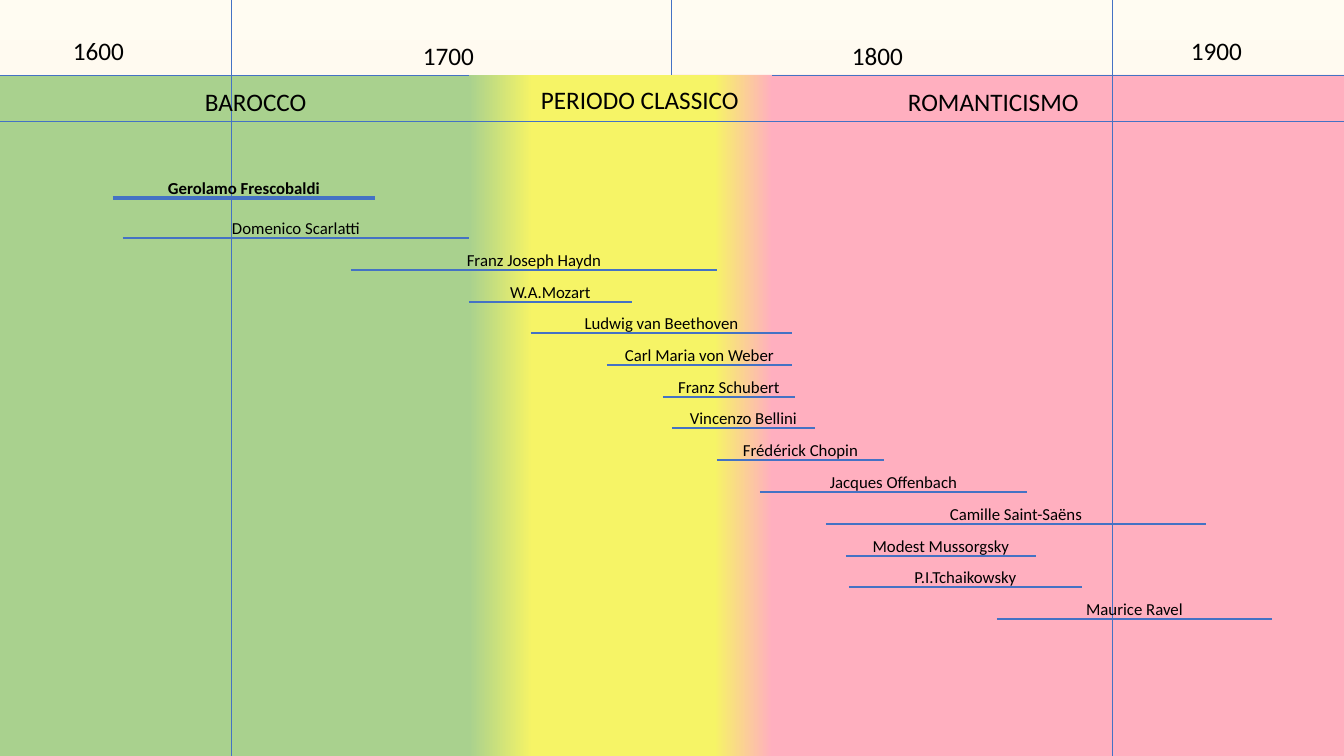
from pptx import Presentation
from pptx.dml.color import RGBColor as RGB
from pptx.enum.shapes import MSO_CONNECTOR as CONN, MSO_SHAPE as SHAPE
from pptx.enum.text import MSO_ANCHOR as ANCHOR, MSO_AUTO_SIZE as FIT, PP_ALIGN as ALIGN
from pptx.oxml.ns import qn
from pptx.util import Pt
from lxml.etree import SubElement

PX = 914400 / 100.8
W, H = 1344, 756
HEADER_Y, ERA_Y = 75, 121
THEME = {
    "font": "Calibri", "text": "000000", "line": "4472C4",
    "baroque": "A9D18E", "classic": "F6F466", "romantic": "FFAFBF",
    "sky": "FFFCF2", "sand": "FBE5D6", "peach": "F8CBAD",
    "heading": 18, "name": 12, "grid": 0.5, "life": 1.5, "highlight": 3,
}


def add_line(s, x1, y1, x2, y2, weight):
    ln = s.shapes.add_connector(CONN.STRAIGHT, *(int(v * PX) for v in (x1, y1, x2, y2)))
    ln.line.color.rgb = RGB.from_string(THEME["line"])
    ln.line.width = Pt(weight)
    SubElement(ln.element.spPr, qn("a:effectLst"))


def add_text(s, text, x, y, w, h, size, wrap=True, bold=False):
    sp = s.shapes.add_textbox(*(int(v * PX) for v in (x, y, w, h)))
    tf = sp.text_frame
    tf.word_wrap = wrap
    tf.auto_size = FIT.SHAPE_TO_FIT_TEXT
    p = tf.paragraphs[0]
    r = p.add_run()
    r.text = text
    r.font.name = THEME["font"]
    r.font.size = Pt(size)
    r.font.bold = bold
    r.font.color.rgb = RGB.from_string(THEME["text"])
    return tf


prs = Presentation()
prs.slide_width, prs.slide_height = int(W * PX), int(H * PX)
s = prs.slides.add_slide(prs.slide_layouts[6])

bands = []
for x, y, w, color in [(0, 76, 633, "baroque"), (671, 75, 673, "romantic"), (469, 75, 303, "classic")]:
    if color == "classic":
        for grid_x in (671, 231):
            add_line(s, grid_x, 0, grid_x, H, THEME["grid"])
        for year, year_x, year_y in [("1600", 63, 30), ("1800", 842, 35), ("1700", 413, 35), ("1900", 1181, 30)]:
            add_text(s, year, year_x, year_y, 72, 40, THEME["heading"], wrap=False)
        add_line(s, 0, HEADER_Y, W, HEADER_Y, THEME["grid"])
        add_text(s, "ROMANTICISMO", 898, 81, 336, 40, THEME["heading"])
        add_text(s, "BAROCCO", 195, 81, 123, 40, THEME["heading"], wrap=False)
        add_line(s, 1112, 0, 1112, H, THEME["grid"])
    band = s.shapes.add_shape(SHAPE.RECTANGLE, *(int(v * PX) for v in (x, y, w, H - y)))
    band.shadow.inherit = False
    band.line.fill.background()
    band.fill.solid()
    band.fill.fore_color.rgb = RGB.from_string(THEME[color])
    bands.append(band)

classic = bands[-1]
gradients = [
    (s.background.fill, s.element, 270, [(0, "sky"), (74, "sand"), (83, "sand"), (100, "peach")]),
    (classic.fill, classic.element, 0, [(0, "baroque"), (21, "classic"), (81, "classic"), (100, "romantic")]),
]
for fill, owner, angle, stops in gradients:
    fill.gradient()
    fill.gradient_angle = angle
    gs_list = next(owner.iter(qn("a:gsLst")))
    for gs in list(gs_list):
        gs_list.remove(gs)
    for pos, color in stops:
        gs = SubElement(gs_list, qn("a:gs"), pos=str(pos * 1000))
        SubElement(gs, qn("a:srgbClr"), val=THEME[color])

add_text(s, "PERIODO CLASSICO", 531, 79, 229, 40, THEME["heading"])
add_line(s, 0, ERA_Y, W, ERA_Y, THEME["grid"])

FIRST_Y, LIST_Y, LIST_END, NAME_H = 198, 238, 619, 20
composers = [
    ("Gerolamo Frescobaldi", 113, 375),
    ("Domenico Scarlatti", 123, 469),
    ("Franz Joseph Haydn", 351, 717),
    ("W.A.Mozart", 469, 632),
    ("Ludwig van Beethoven", 531, 792),
    ("Carl Maria von Weber", 607, 792),
    ("Franz Schubert", 663, 795),
    ("Vincenzo Bellini", 672, 815),
    ("Frédérick Chopin", 717, 884),
    ("Jacques Offenbach", 760, 1027),
    ("Camille Saint-Saëns", 826, 1206),
    ("Modest Mussorgsky", 846, 1036),
    ("P.I.Tchaikowsky", 849, 1082),
    ("Maurice Ravel", 997, 1272),
]
row_gap = (LIST_END - LIST_Y) / (len(composers) - 2)
for i, (name, born, died) in enumerate(composers):
    first = i == 0
    y = FIRST_Y if first else round(LIST_Y + (i - 1) * row_gap)
    add_line(s, born, y, died, y, THEME["highlight" if first else "life"])
    tf = add_text(s, name, born, y - NAME_H, died - born, NAME_H, THEME["name"], bold=first)
    tf.margin_left = tf.margin_right = tf.margin_top = tf.margin_bottom = 0
    tf.vertical_anchor = ANCHOR.MIDDLE
    tf.paragraphs[0].alignment = ALIGN.CENTER

prs.save("out.pptx")
